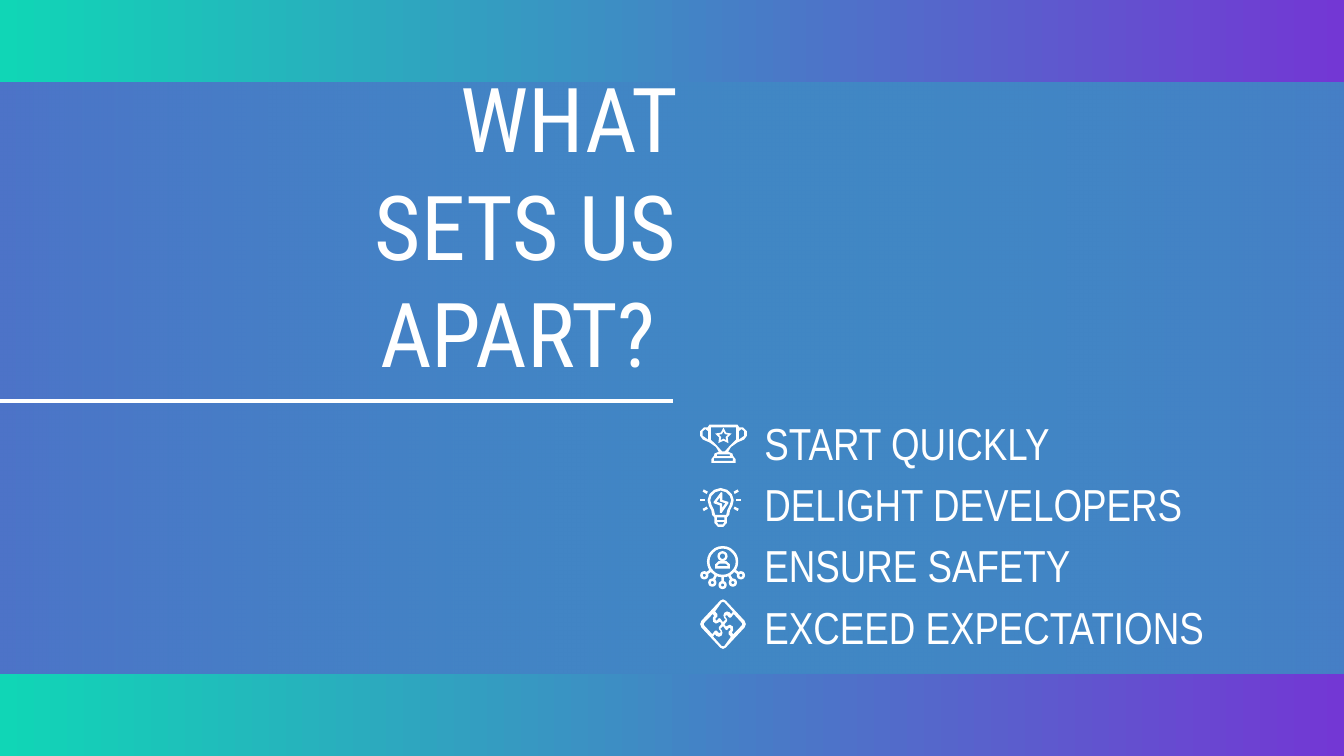
from math import cos, hypot, pi, sin

from pptx import Presentation
from pptx.dml.color import RGBColor
from pptx.enum.shapes import MSO_CONNECTOR, MSO_SHAPE
from pptx.enum.text import MSO_ANCHOR, PP_ALIGN
from pptx.oxml.ns import qn
from pptx.oxml.xmlchemy import OxmlElement
from pptx.util import Pt

WHITE = RGBColor(0xFF, 0xFF, 0xFF)
TEAL = RGBColor(0x10, 0xD6, 0xB6)
PURPLE = RGBColor(0x73, 0x37, 0xD4)
STEPS_PER_POINT = 10
ICON_LEFT = 375.1
REASONS = ["START QUICKLY", "DELIGHT DEVELOPERS", "ENSURE SAFETY", "EXCEED EXPECTATIONS"]


def set_gradient(fill, colors):
    """Fill with a left-to-right gradient."""
    fill.gradient()
    fill.gradient_angle = 0
    for stop, color in zip(fill.gradient_stops, colors):
        stop.color.rgb = color


def add_band(page, left, top, width, height, colors, opacities):
    """Add a rectangle with a translucent gradient."""
    band = page.shapes.add_shape(MSO_SHAPE.RECTANGLE, Pt(left), Pt(top), Pt(width), Pt(height))
    band.shadow.inherit = False
    band.line.fill.background()
    set_gradient(band.fill, colors)
    stops = band.element.spPr.iter(qn("a:srgbClr"))
    for color, opacity in zip(stops, opacities):
        alpha = OxmlElement("a:alpha")
        alpha.set("val", str(opacity * 1000))
        color.append(alpha)


def add_rule(page, left, top, width):
    """Add a white horizontal line."""
    rule = page.shapes.add_connector(
        MSO_CONNECTOR.STRAIGHT, Pt(left), Pt(top), Pt(left + width), Pt(top))
    rule.line.color.rgb = WHITE
    rule.line.width = Pt(2.25)
    rule.element.spPr.append(OxmlElement("a:effectLst"))


def add_text(page, text, left, top, width, height, *, font, size,
             align=PP_ALIGN.LEFT, anchor=MSO_ANCHOR.TOP):
    """Add a wrapped text box with white text."""
    box = page.shapes.add_textbox(Pt(left), Pt(top), Pt(width), Pt(height))
    frame = box.text_frame
    frame.word_wrap = True
    frame.vertical_anchor = anchor
    frame.margin_left = frame.margin_right = Pt(7.2)
    frame.margin_top = frame.margin_bottom = Pt(7.2)
    para = frame.paragraphs[0]
    para.alignment = align
    span = para.add_run()
    span.text = text
    span.font.name = font
    span.font.size = Pt(size)
    span.font.color.rgb = WHITE


def radial(x, y, *radii, count=24):
    """Return points around a centre, cycling through the radii."""
    turns = [(radii[i % len(radii)], 2 * pi * i / count) for i in range(count)]
    return [(x + r * sin(a), y - r * cos(a)) for r, a in turns]


def strip(x1, y1, x2, y2, width=1.4):
    """Return the corners of a thick straight stroke."""
    length = hypot(x2 - x1, y2 - y1)
    dx, dy = (y1 - y2) * width / 2 / length, (x2 - x1) * width / 2 / length
    return [(x1 + dx, y1 + dy), (x2 + dx, y2 + dy), (x2 - dx, y2 - dy), (x1 - dx, y1 - dy)]


def mirrored(points, width):
    """Reflect points from left to right."""
    return [(width - x, y) for x, y in points]


def half_turned(points, width, height):
    """Turn points upside down about the middle."""
    return [(width - x, height - y) for x, y in points]


def trophy():
    """Return the star and cup outlines."""
    cup = [(5, 0), (20, 0), (21, 1.5), (23, 1.5), (25, 3.5), (25, 6), (23.5, 8), (20, 9.5),
           (16.5, 12), (15, 14.5), (17.3, 15.5), (17.6, 16.7), (19, 18.5), (19, 20.5),
           (6, 20.5), (6, 18.5), (7.4, 16.7), (7.7, 15.5), (10, 14.5), (8.5, 12), (5, 9.5),
           (1.5, 8), (0, 6), (0, 3.5), (2, 1.5), (4, 1.5)]
    bowl = [(5.7, 1.4), (19.3, 1.4), (19.3, 8), (16, 11.2), (13.2, 14.4), (11.8, 14.4),
            (9, 11.2), (5.7, 8)]
    handle = [(1.4, 3.5), (2.8, 2.4), (4.3, 3.5), (4.3, 8), (1.4, 6)]
    base = strip(7.4, 18.7, 17.6, 18.7)
    stem = strip(9, 16.4, 16, 16.4, 1)
    star = [radial(12.5, 6.2, 4.6, 2.4, count=10), radial(12.5, 6.2, 2.6, 1.3, count=10)]
    return [star, [cup, bowl, handle, mirrored(handle, 25), base, stem]]


def light_bulb():
    """Return the bulb, ray and bolt outlines."""
    glass = [(11, 0), (14.5, 1), (17, 3.3), (18, 6.5), (17.3, 9.5), (16, 12), (15.6, 14.4),
             (14.4, 15.8), (14.4, 18.7), (12.4, 20.9), (9.6, 20.9), (7.6, 18.7), (7.6, 15.8),
             (6.4, 14.4), (6, 12), (4.7, 9.5), (4, 6.5), (5, 3.3), (7.5, 1)]
    inside = [(11, 1.4), (14, 2.3), (15.9, 4.2), (16.6, 6.5), (15.9, 9.1), (14.6, 11.7),
              (14, 14.4), (8, 14.4), (7.4, 11.7), (6.1, 9.1), (5.4, 6.5), (6.1, 4.2), (8, 2.3)]
    collar = strip(9, 16.5, 13, 16.5)
    cap = [(9, 18.2), (13, 18.2), (12.3, 19.5), (9.7, 19.5)]
    bolt = [(11.2, 2.2), (11.9, 2.6), (11.9, 6.5), (15.1, 7.5), (15.1, 8.2), (11.5, 13.4),
            (10.5, 13.4), (10.5, 9.4), (7.2, 8.2), (7.2, 7.5)]
    spark = [(10.6, 5), (10.6, 7.3), (13.5, 8.2), (11.7, 10.8), (11.7, 8.4), (8.8, 7.4)]
    rays = [strip(0, 6.5, 2.6, 6.5), strip(1.6, 1.4, 3.8, 2.6), strip(1.6, 11.8, 3.8, 10.6)]
    rays += [mirrored(ray, 22) for ray in rays]
    return [[glass, inside, collar, cap], [bolt, spark], *[[ray] for ray in rays]]


def user_network():
    """Return the network and person outlines."""
    x, y, radius, node_radius = 12, 8.5, 8.4, 2.2
    network = [radial(x, y, radius), radial(x, y, 7)]
    for node_x, node_y in [(2.2, 15.8), (6.5, 19.7), (12, 21), (17.5, 19.7), (21.8, 15.8)]:
        distance = hypot(node_x - x, node_y - y)
        ux, uy = (node_x - x) / distance, (node_y - y) / distance
        end = distance - node_radius
        network += [radial(node_x, node_y, node_radius), radial(node_x, node_y, 0.8),
                    strip(x + ux * radius, y + uy * radius, x + ux * end, y + uy * end)]
    body = [(8, 12.2), (8, 10), (9.8, 8.3), (14.2, 8.3), (16, 10), (16, 12.2)]
    shirt = [(9.4, 10.9), (9.4, 10.3), (10.4, 9.6), (13.6, 9.6), (14.6, 10.3), (14.6, 10.9)]
    return [network, [radial(x, 5.6, 2.7), radial(x, 5.6, 1.4), body, shirt]]


def puzzle():
    """Return the diamond and its four interlocking pieces."""
    width, height = 24.5, 26.6
    corner = [(0.7, 11.5), (10.8, 0.7), (12.2, 0), (13.7, 0.7), (23.8, 11.5), (24.5, 13.3)]
    top = [(12.2, 1.4), (13, 1.6), (17.6, 6.7), (16.6, 7.9), (15.8, 7), (14.4, 6.5), (13, 7.2),
           (12.5, 8.6), (13, 10.1), (13.7, 10.8), (12.2, 12.2), (10.8, 10.3), (10.1, 10.1),
           (9, 11.3), (8.4, 11.3), (8.2, 10.3), (9.2, 9.2), (9.2, 7.9), (8, 6.5), (11.5, 1.6)]
    left = [(6.7, 7.9), (7.5, 8.8), (6.8, 10), (7, 12), (8.5, 13), (10.1, 12.3), (10.7, 12),
            (11.5, 13.2), (10, 15), (10.1, 16), (11, 17.2), (10.8, 18), (10, 18), (8.9, 16.8),
            (8, 16.8), (6.5, 18.7), (2, 13.8), (2, 12.8)]
    halves = [half_turned(part, width, height) for part in (corner, top, left)]
    return [[corner + halves[0], top, left, *halves[1:]]]


def add_outline(page, contours, left, top):
    """Add one white freeform made of several closed contours."""
    scaled = [[(round((left + x) * STEPS_PER_POINT), round((top + y) * STEPS_PER_POINT))
               for x, y in contour] for contour in contours]
    builder = page.shapes.build_freeform(*scaled[0][0], scale=Pt(1 / STEPS_PER_POINT))
    builder.add_line_segments(scaled[0][1:], close=True)
    for contour in scaled[1:]:
        builder.move_to(*contour[0])
        builder.add_line_segments(contour[1:], close=True)
    outline = builder.convert_to_shape()
    outline.shadow.inherit = False
    outline.fill.solid()
    outline.fill.fore_color.rgb = WHITE
    outline.line.fill.background()


def main():
    """Build the slide and save the deck."""
    deck = Presentation()
    deck.slide_width, deck.slide_height = Pt(720), Pt(405)
    page = deck.slides.add_slide(deck.slide_layouts[6])
    set_gradient(page.background.fill, (TEAL, PURPLE))
    add_band(page, 0, 44, 720, 317, (PURPLE, TEAL), (62, 46))
    add_rule(page, 0, 215, 360.3)
    add_text(page, "WHAT SETS US APART? ", 150.5, 76.3, 218.9, 137.5, font="Roboto Condensed",
             size=48, align=PP_ALIGN.RIGHT, anchor=MSO_ANCHOR.BOTTOM)
    for row, reason in enumerate(REASONS):
        add_text(page, reason, 402.5, 215.3 + row * 32.9, 348.5, 26.6,
                 font="Arial Narrow", size=24)
    icons = [(trophy, 227.5), (light_bulb, 261.4), (user_network, 292.4), (puzzle, 321.1)]
    for icon, top in icons:
        for contours in icon():
            add_outline(page, contours, ICON_LEFT, top)
    deck.save("out.pptx")


if __name__ == "__main__":
    main()
